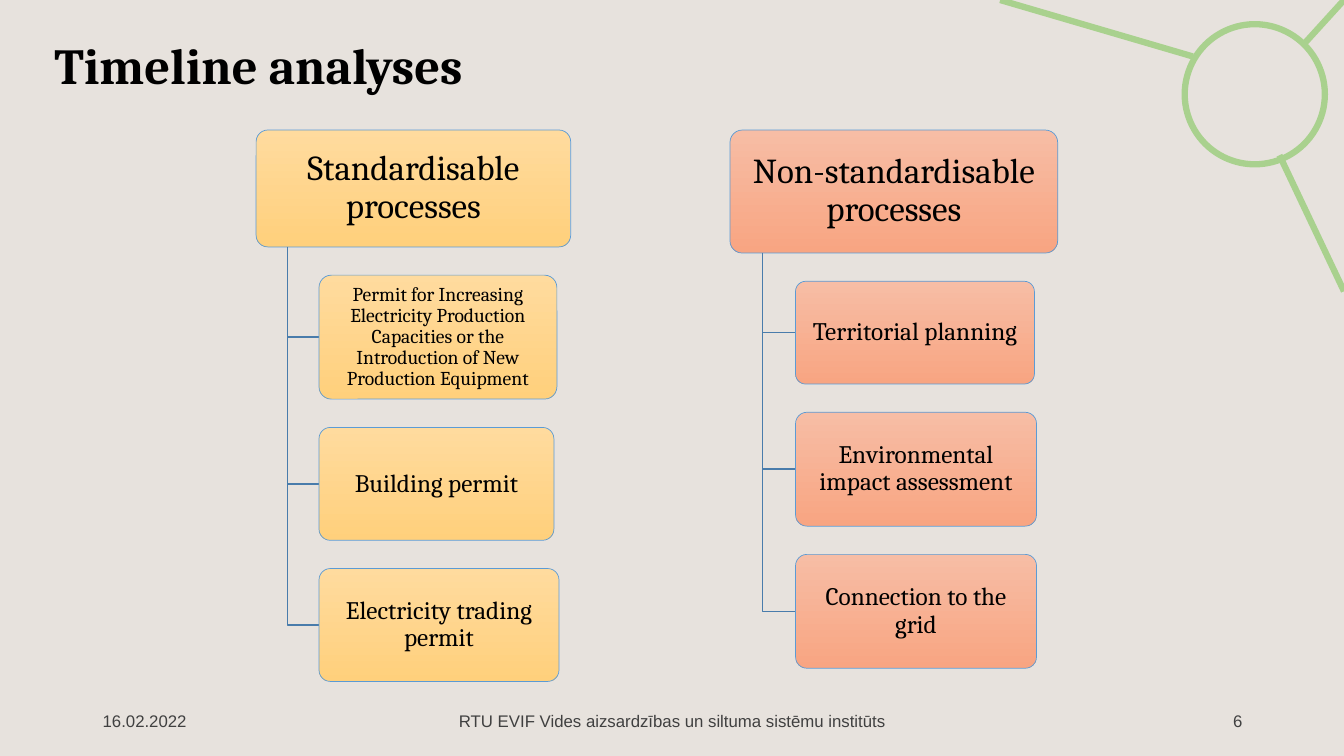
from pptx import Presentation
from pptx.dml.color import RGBColor
from pptx.enum.shapes import MSO_CONNECTOR, MSO_SHAPE
from pptx.enum.text import MSO_ANCHOR, PP_ALIGN
from pptx.oxml.ns import qn
from pptx.util import Inches, Pt
from lxml import etree

ROUND_RECT, OVAL = MSO_SHAPE.ROUNDED_RECTANGLE, MSO_SHAPE.OVAL
STRAIGHT = MSO_CONNECTOR.STRAIGHT
MIDDLE = MSO_ANCHOR.MIDDLE
LEFT, CENTER, RIGHT = PP_ALIGN.LEFT, PP_ALIGN.CENTER, PP_ALIGN.RIGHT

COLORS = {
    "background": "E7E2DD", "ornament": "A9D18E", "border": "5B9BD5",
    "branch": "497CAB", "text": "000000", "footer": "404040",
    "yellow_top": "FFDB9E", "yellow_bottom": "FFD07C",
    "orange_top": "F7BDA5", "orange_bottom": "F8A582",
}
TOP, GAP = 1.29, 0.28

# Each tree: left, colour, header (text, width, height), children (text, width, height, size)
TREES = [
    (2.54, "yellow", ("Standardisable processes", 3.12, 1.16), [
        ("Permit for Increasing Electricity Production Capacities or the "
         "Introduction of New Production Equipment", 2.36, 1.23, 14),
        ("Building permit", 2.33, 1.12, 18),
        ("Electricity trading permit", 2.38, 1.12, 18),
    ]),
    (7.24, "orange", ("Non-standardisable processes", 3.25, 1.22), [
        ("Territorial planning", 2.37, 1.02, 18),
        ("Environmental impact assessment", 2.39, 1.13, 18),
        ("Connection to the grid", 2.39, 1.13, 18),
    ]),
]
FOOTERS = [
    ("16.02.2022", 0.92, 3, LEFT),
    ("RTU EVIF Vides aizsardzības un siltuma sistēmu institūts", 4.42, 4.5, CENTER),
    ("6", 9.42, 3, RIGHT),
]
RAYS = [(13.33, 2.89, 12.69, 1.54), (11.83, 0.56, 9.92, 0), (13.33, 0, 12.93, 0.44)]


def rgb(name):
    return RGBColor.from_string(COLORS[name])


def set_line(s, color, width):
    s.line.color.rgb = rgb(color)
    s.line.width = Pt(width)


def write(s, text, size, font="Cambria", color="text", bold=False,
          align=CENTER, spacing=0.9, inset=(0.1, 0.05)):
    tf = s.text_frame
    tf.word_wrap = True
    tf.vertical_anchor = MIDDLE
    tf.margin_left = tf.margin_right = Inches(inset[0])
    tf.margin_top = tf.margin_bottom = Inches(inset[1])
    p = tf.paragraphs[0]
    p.alignment = align
    p.line_spacing = spacing
    r = p.add_run()
    r.text = text
    r.font.name, r.font.size, r.font.bold = font, Pt(size), bold
    r.font.color.rgb = rgb(color)


def add_text(slide, text, x, y, w, h, **style):
    write(slide.shapes.add_textbox(Inches(x), Inches(y), Inches(w), Inches(h)), text, **style)


def add_box(slide, text, x, y, w, h, size, color):
    s = slide.shapes.add_shape(ROUND_RECT, Inches(x), Inches(y), Inches(w), Inches(h))
    s.adjustments[0] = 0.1
    s.shadow.inherit = False
    s.fill.gradient()
    s.fill.gradient_angle = 270
    for stop, end in zip(s.fill.gradient_stops, ("top", "bottom")):
        stop.color.rgb = rgb(f"{color}_{end}")
    set_line(s, "border", 0.5)
    write(s, text, size, inset=(0.07, 0.06))


def add_branch(slide, x, y, to_x, to_y):
    fb = slide.shapes.build_freeform(Inches(x), Inches(y))
    fb.add_line_segments([(Inches(x), Inches(to_y)), (Inches(to_x), Inches(to_y))], close=False)
    s = fb.convert_to_shape()
    s.shadow.inherit = False
    s.fill.background()
    set_line(s, "branch", 1)


def add_ray(slide, x1, y1, x2, y2):
    s = slide.shapes.add_connector(STRAIGHT, Inches(x1), Inches(y1), Inches(x2), Inches(y2))
    set_line(s, "ornament", 4.5)
    etree.SubElement(s._element.spPr, qn("a:effectLst"))


def add_ornament(slide):
    s = slide.shapes.add_shape(OVAL, Inches(11.75), Inches(0.24), Inches(1.39), Inches(1.39))
    s.shadow.inherit = False
    s.fill.background()
    set_line(s, "ornament", 4.5)
    for ray in RAYS:
        add_ray(slide, *ray)


def add_tree(slide, x, color, header, children):
    text, w, h = header
    add_box(slide, text, x, TOP, w, h, 25, color)
    stem_x, child_x, stem_y = x + w * 0.1, x + w * 0.2, TOP + h
    y = stem_y + GAP
    for text, child_w, child_h, size in children:
        add_branch(slide, stem_x, stem_y, child_x, y + child_h / 2)
        add_box(slide, text, child_x, y, child_w, child_h, size, color)
        y += child_h + GAP


def main():
    prs = Presentation()
    prs.slide_width, prs.slide_height = Inches(13.33), Inches(7.5)
    slide = prs.slides.add_slide(prs.slide_layouts[6])
    slide.background.fill.solid()
    slide.background.fill.fore_color.rgb = rgb("background")

    # Corner ornament and title
    add_ornament(slide)
    add_text(slide, "Timeline analyses", 0.44, 0.27, 10.34, 0.82,
             size=36, bold=True, align=LEFT)

    # Process trees
    for tree in TREES:
        add_tree(slide, *tree)

    # Footer
    for text, x, w, align in FOOTERS:
        add_text(slide, text, x, 6.95, w, 0.4, size=12, font="Arial",
                 color="footer", align=align, spacing=1.0)

    prs.save("out.pptx")


if __name__ == "__main__":
    main()
